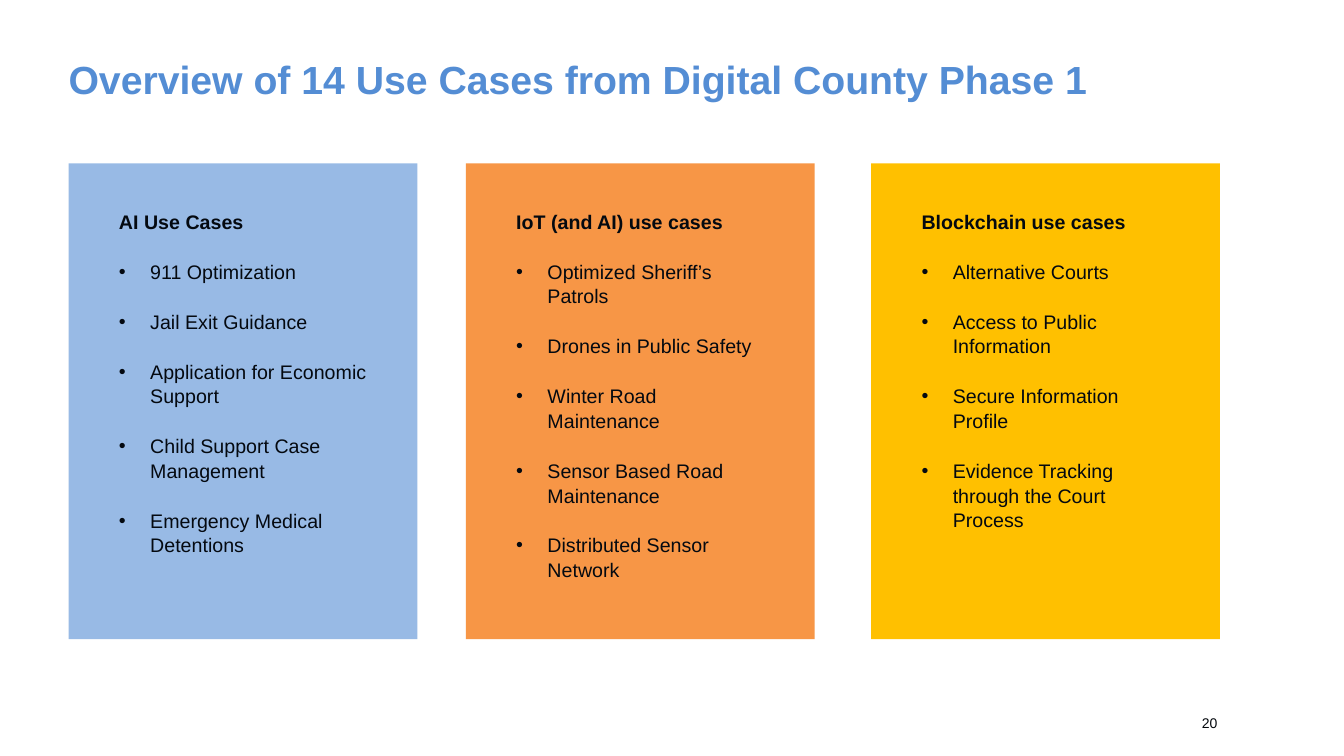
from dataclasses import dataclass

from lxml.etree import SubElement
from pptx import Presentation
from pptx.dml.color import RGBColor
from pptx.enum.shapes import MSO_SHAPE
from pptx.enum.text import MSO_ANCHOR, MSO_AUTO_SIZE, PP_ALIGN
from pptx.oxml.ns import qn
from pptx.slide import Slide
from pptx.text.text import TextFrame, _Paragraph
from pptx.util import Inches, Pt

TITLE_BLUE = RGBColor(0x54, 0x8D, 0xD4)
TEXT_DARK = RGBColor(0x04, 0x09, 0x10)
NUMBER_DARK = RGBColor(0x03, 0x07, 0x0C)
SOFT_BLUE = RGBColor(0x98, 0xBA, 0xE5)
ORANGE = RGBColor(0xF7, 0x96, 0x46)
GOLD = RGBColor(0xFF, 0xC0, 0x00)

COMPARISON_LAYOUT = 4
PANEL_TOP, PANEL_WIDTH, PANEL_HEIGHT = 1.62, 3.46, 4.72
TEXT_INSET = 0.4
BULLET_INDENT = 0.31


@dataclass
class Panel:
    left: float
    text_width: float
    color: RGBColor
    heading: str
    cases: list[str]


PANELS = [
    Panel(0.68, 2.76, SOFT_BLUE, "AI Use Cases", [
        "911 Optimization",
        "Jail Exit Guidance",
        "Application for Economic Support",
        "Child Support Case Management",
        "Emergency Medical Detentions",
    ]),
    Panel(4.62, 2.6, ORANGE, "IoT (and AI) use cases", [
        "Optimized Sheriff’s Patrols",
        "Drones in Public Safety",
        "Winter Road Maintenance",
        "Sensor Based Road Maintenance",
        "Distributed Sensor Network",
    ]),
    Panel(8.64, 2.6, GOLD, "Blockchain use cases", [
        "Alternative Courts",
        "Access to Public Information",
        "Secure Information Profile",
        "Evidence Tracking through the Court Process",
    ]),
]


def place(shape, left: float, top: float, width: float, height: float) -> None:
    shape.left, shape.top = Inches(left), Inches(top)
    shape.width, shape.height = Inches(width), Inches(height)


def set_frame(tf: TextFrame, anchor: MSO_ANCHOR, left: float = 0, right: float = 0,
              vertical: float = 0) -> None:
    tf.word_wrap = True
    tf.auto_size = MSO_AUTO_SIZE.NONE
    tf.vertical_anchor = anchor
    tf.margin_left, tf.margin_right = Inches(left), Inches(right)
    tf.margin_top = tf.margin_bottom = Inches(vertical)


def write(p: _Paragraph, text: str, *, size: float, color: RGBColor, bold: bool = False,
          after: float = 0, spacing: float = 1.0) -> None:
    p.alignment = PP_ALIGN.LEFT
    p.line_spacing = spacing
    p.space_before, p.space_after = Pt(0), Pt(after)
    r = p.add_run()
    r.text = text
    r.font.name = "Arial"
    r.font.size = Pt(size)
    r.font.bold = bold
    r.font.color.rgb = color


def set_bullet(p: _Paragraph, bulleted: bool) -> None:
    pPr = p._p.get_or_add_pPr()
    indent = Inches(BULLET_INDENT) if bulleted else 0
    pPr.set("marL", str(indent))
    pPr.set("indent", str(-indent))
    if bulleted:
        SubElement(pPr, qn("a:buFont")).set("typeface", "Arial")
        SubElement(pPr, qn("a:buChar")).set("char", "•")
    else:
        SubElement(pPr, qn("a:buNone"))


def draw_panel(s: Slide, panel: Panel, body) -> None:
    sp = s.shapes.add_shape(MSO_SHAPE.RECTANGLE, Inches(panel.left), Inches(PANEL_TOP),
                            Inches(PANEL_WIDTH), Inches(PANEL_HEIGHT))
    sp.shadow.inherit = False
    sp.fill.solid()
    sp.fill.fore_color.rgb = panel.color
    sp.line.fill.background()
    body._element.addprevious(sp._element)

    place(body, panel.left + TEXT_INSET, PANEL_TOP + TEXT_INSET, panel.text_width, 3.97)
    tf = body.text_frame
    set_frame(tf, MSO_ANCHOR.TOP, left=0.1, right=0.1, vertical=0.05)
    for i, text in enumerate([panel.heading, *panel.cases]):
        p = tf.add_paragraph() if i else tf.paragraphs[0]
        write(p, text, size=14, color=TEXT_DARK, bold=i == 0, after=18, spacing=1.05)
        set_bullet(p, bulleted=i > 0)


def main() -> None:
    prs = Presentation()
    prs.slide_width, prs.slide_height = Inches(13.33), Inches(7.5)
    s = prs.slides.add_slide(prs.slide_layouts[COMPARISON_LAYOUT])

    title = s.shapes.title
    place(title, 0.68, 0.52, 11.33, 0.5)
    set_frame(title.text_frame, MSO_ANCHOR.BOTTOM)
    write(title.text_frame.paragraphs[0], "Overview of 14 Use Cases from Digital County Phase 1",
          size=28, color=TITLE_BLUE, bold=True)

    bodies = [ph for ph in s.placeholders if ph.placeholder_format.idx > 0]
    for panel, body in zip(PANELS, bodies):
        draw_panel(s, panel, body)
    for spare in bodies[len(PANELS):]:
        spare._element.getparent().remove(spare._element)

    number = s.shapes.add_textbox(Inches(11.92), Inches(6.97), Inches(0.44), Inches(0.4))
    set_frame(number.text_frame, MSO_ANCHOR.MIDDLE, right=0.1)
    write(number.text_frame.paragraphs[0], "20", size=10, color=NUMBER_DARK)

    prs.save("out.pptx")


if __name__ == "__main__":
    main()
